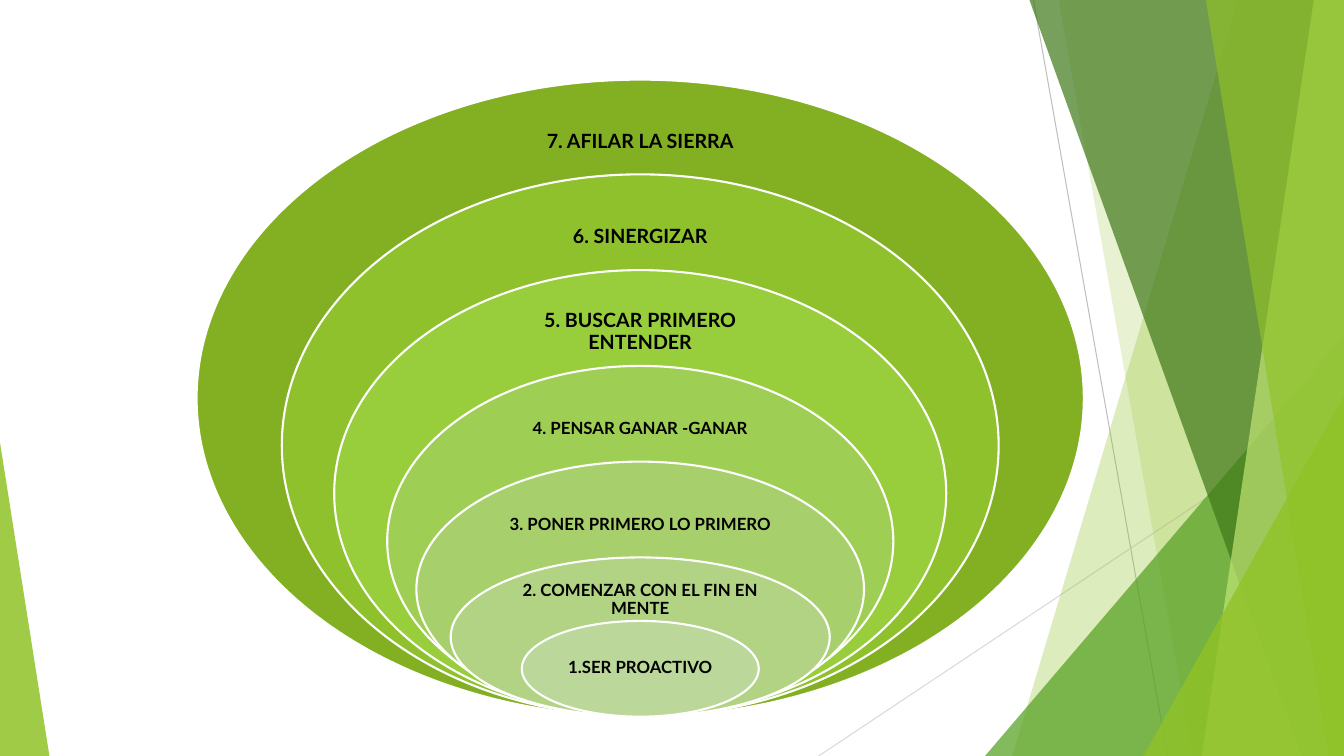
from dataclasses import dataclass

from pptx import Presentation
from pptx.dml.color import RGBColor
from pptx.enum.shapes import MSO_CONNECTOR, MSO_SHAPE
from pptx.enum.text import MSO_ANCHOR, PP_ALIGN
from pptx.oxml.ns import qn
from pptx.oxml.xmlchemy import OxmlElement
from pptx.util import Pt

PX = 9144  # 100 px to the inch
WIDTH, HEIGHT = 1333, 750


@dataclass(frozen=True)
class Theme:
    font: str = "Lato"
    large: int = 14
    small: int = 12
    text: str = "000000"
    outline: str = "FFFFFF"
    line_dark: str = "BFBFBF"
    line_light: str = "D9D9D9"
    lime: str = "90C226"
    leaf: str = "54A021"
    forest: str = "3F7819"
    pale: str = "C0E474"
    rings: tuple = ("83B022", "8EC12C", "98CD3B", "9FCE54", "A7CF6C", "B1D383", "BBD79A")


theme = Theme()


def paint(shape, color, opacity=100):
    shape.shadow.inherit = False
    shape.fill.solid()
    shape.fill.fore_color.rgb = RGBColor.from_string(color)
    if opacity < 100:
        alpha = OxmlElement("a:alpha")
        alpha.set("val", str(opacity * 1000))
        shape.element.spPr.find(".//" + qn("a:srgbClr")).append(alpha)


deck = Presentation()
deck.slide_width, deck.slide_height = WIDTH * PX, HEIGHT * PX
slide = deck.slides.add_slide(deck.slide_layouts[6])
shapes = slide.shapes

# Thin lines behind the facets
for ends, color in (
    ((1025, 0, 1158, HEIGHT), theme.line_dark),
    ((WIDTH, 403, 812, HEIGHT), theme.line_light),
):
    line = shapes.add_connector(MSO_CONNECTOR.STRAIGHT, *(value * PX for value in ends))
    line.line.color.rgb = RGBColor.from_string(color)
    line.line.width = Pt(0.75)
    line.element.spPr.append(OxmlElement("a:effectLst"))

# A band runs from its top-left and bottom-left x to the right edge;
# a triangle stands on the bottom edge: left, top, width, apex position
facets = (
    ("band", (1228, 1004), theme.lime, 30),
    ("band", (1050, 1183), theme.lime, 20),
    ("triangle", (977, 333, 356, 1), theme.leaf, 72),
    ("band", (1021, 1291), theme.forest, 70),
    ("band", (1303, 1192), theme.pale, 70),
    ("band", (1196, 1318), theme.lime, 65),
    ("triangle", (1134, 393, 199, 1), theme.lime, 80),
    ("triangle", (0, 439, 49, 0), theme.lime, 85),
)
for kind, geometry, color, opacity in facets:
    if kind == "band":
        top_x, bottom_x = geometry
        outline = shapes.build_freeform(top_x, 0, scale=PX)
        outline.add_line_segments([(WIDTH, 0), (WIDTH, HEIGHT), (bottom_x, HEIGHT)], close=True)
        facet = outline.convert_to_shape()
    else:
        left, top, width, apex = geometry
        facet = shapes.add_shape(
            MSO_SHAPE.ISOSCELES_TRIANGLE, left * PX, top * PX, width * PX, (HEIGHT - top) * PX
        )
        facet.adjustments[0] = apex
    paint(facet, color, opacity)
    facet.line.fill.background()

# Nested ellipses share a centre line and a bottom
CENTER, BOTTOM = 635, 711
# label, ellipse top and width, label top, width and height, type size, inset
habits = (
    ("7. AFILAR LA SIERRA", 79, 880, 110, 330, 63, theme.large, 11),
    ("6. SINERGIZAR", 173, 711, 204, 307, 62, theme.large, 11),
    ("5. BUSCAR PRIMERO ENTENDER", 268, 607, 299, 314, 61, theme.large, 11),
    ("4. PENSAR GANAR -GANAR", 363, 502, 394, 271, 63, theme.small, 9),
    ("3. PONER PRIMERO LO PRIMERO", 458, 444, 489, 289, 63, theme.small, 9),
    ("2. COMENZAR CON EL FIN EN MENTE", 553, 376, 576, 256, 38, theme.small, 9),
    ("1.SER PROACTIVO", 616, 235, 639, 166, 47, theme.small, 9),
)
for habit, color in zip(habits, theme.rings):
    label, top, width, text_top, text_width, text_height, size, inset = habit
    ring = shapes.add_shape(
        MSO_SHAPE.OVAL, round((CENTER - width / 2) * PX), top * PX, width * PX, (BOTTOM - top) * PX
    )
    paint(ring, color)
    ring.line.color.rgb = RGBColor.from_string(theme.outline)
    ring.line.width = Pt(1.5)

    box = shapes.add_textbox(
        round((CENTER - text_width / 2) * PX), text_top * PX, text_width * PX, text_height * PX
    )
    frame = box.text_frame
    frame.word_wrap = True
    frame.vertical_anchor = MSO_ANCHOR.MIDDLE
    frame.margin_left = frame.margin_right = inset * PX
    frame.margin_top = frame.margin_bottom = inset * PX
    frame.text = label
    para = frame.paragraphs[0]
    para.alignment = PP_ALIGN.CENTER
    para.line_spacing = 0.9
    font = para.runs[0].font
    font.name, font.size, font.bold = theme.font, Pt(size), True
    font.color.rgb = RGBColor.from_string(theme.text)

deck.save("out.pptx")
